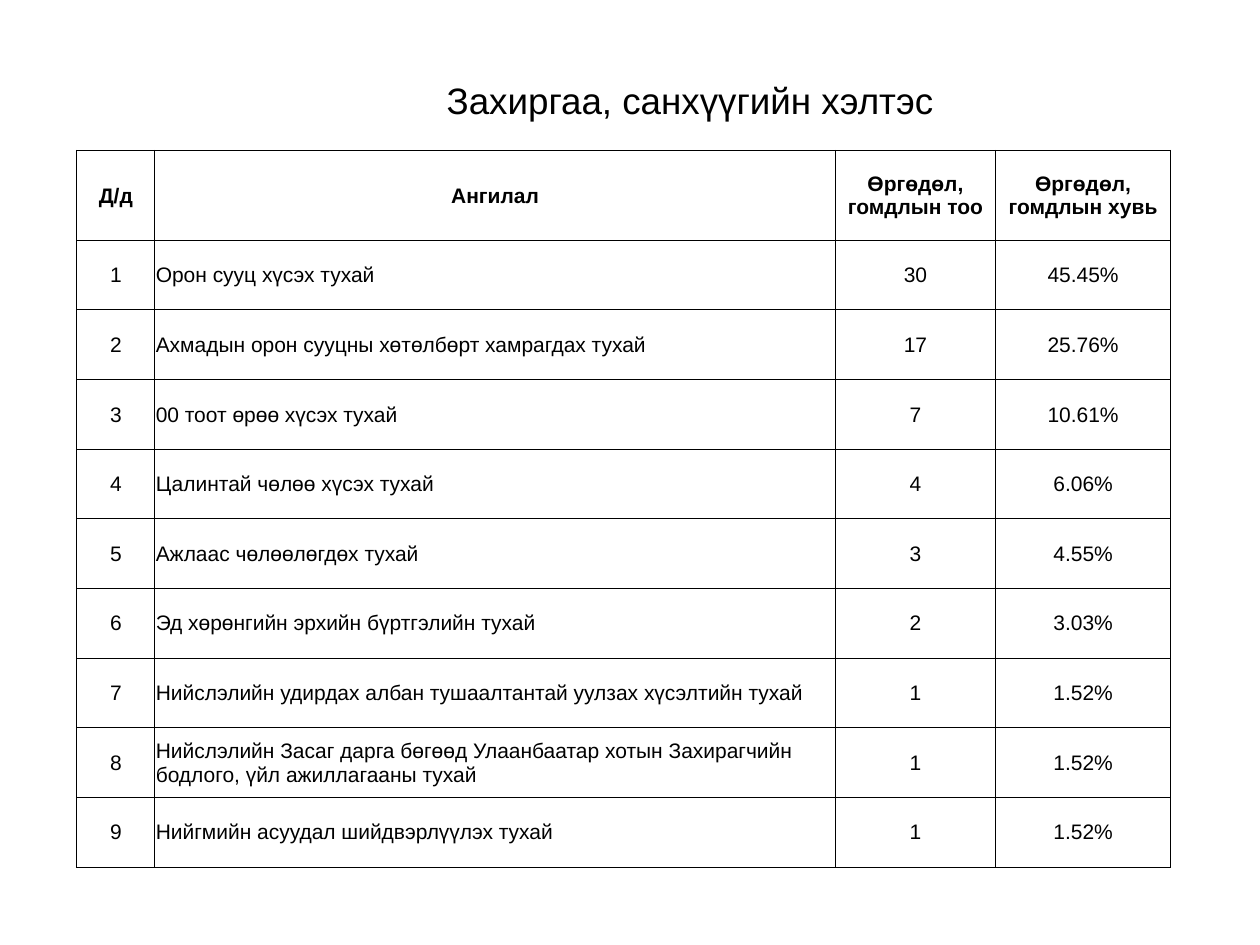
from lxml import etree
from pptx import Presentation
from pptx import util as u
from pptx.dml.color import RGBColor
from pptx.enum import text
from pptx.oxml.ns import qn

TITLE = "Захиргаа, санхүүгийн хэлтэс"
HEAD = ("Д/д", "Ангилал", "Өргөдөл, гомдлын тоо", "Өргөдөл, гомдлын хувь")
ITEMS = [
    ("Орон сууц хүсэх тухай", 30),
    ("Ахмадын орон сууцны хөтөлбөрт хамрагдах тухай", 17),
    ("00 тоот өрөө хүсэх тухай", 7),
    ("Цалинтай чөлөө хүсэх тухай", 4),
    ("Ажлаас чөлөөлөгдөх тухай", 3),
    ("Эд хөрөнгийн эрхийн бүртгэлийн тухай", 2),
    ("Нийслэлийн удирдах албан тушаалтантай уулзах хүсэлтийн тухай", 1),
    ("Нийслэлийн Засаг дарга бөгөөд Улаанбаатар хотын Захирагчийн "
     "бодлого, үйл ажиллагааны тухай", 1),
    ("Нийгмийн асуудал шийдвэрлүүлэх тухай", 1),
]

THEME = {"font": "Arial", "ink": "000000", "paper": "FFFFFF",
         "title": 21, "body": 12, "rule": 0.5}
LEFT, TOP, HIGH = 1.55, 3.03, 14.45
COLS = (1.57, 13.72, 3.23, 3.53)
HEAD_H = 1.81
ROW_H = (HIGH - HEAD_H) / len(ITEMS)
INSET = 0.02


def write(frame, words, size, bold=False, align=text.PP_ALIGN.CENTER):
    par = frame.paragraphs[0]
    par.alignment = align
    run = par.add_run()
    run.text = words
    run.font.name = THEME["font"]
    run.font.size = u.Pt(size)
    run.font.bold = bold
    run.font.color.rgb = RGBColor.from_string(THEME["ink"])


def frame_cell(cell):
    """Rule all four sides; borders must come before the fill in the XML."""
    props = cell._tc.get_or_add_tcPr()
    for i, side in enumerate(("lnL", "lnR", "lnT", "lnB")):
        line = etree.Element(qn("a:" + side), w=str(u.Pt(THEME["rule"])))
        fill = etree.SubElement(line, qn("a:solidFill"))
        etree.SubElement(fill, qn("a:srgbClr"), val=THEME["ink"])
        props.insert(i, line)


def add_title(slide):
    box = slide.shapes.add_textbox(u.Cm(3.71), u.Cm(1.45), u.Cm(20.4), u.Cm(1.14))
    box.text_frame.word_wrap = True
    box.text_frame.auto_size = text.MSO_AUTO_SIZE.SHAPE_TO_FIT_TEXT
    write(box.text_frame, TITLE, THEME["title"])


def add_grid(slide):
    total = sum(count for _, count in ITEMS)
    rows = [HEAD] + [(str(n), name, str(count), f"{count / total:.2%}")
                     for n, (name, count) in enumerate(ITEMS, 1)]
    grid = slide.shapes.add_table(len(rows), len(COLS), u.Cm(LEFT), u.Cm(TOP),
                                  u.Cm(sum(COLS)), u.Cm(HIGH)).table
    grid.first_row = grid.horz_banding = False
    for col, wide in zip(grid.columns, COLS):
        col.width = u.Cm(wide)
    for r, row in enumerate(rows):
        grid.rows[r].height = u.Cm(ROW_H if r else HEAD_H)
        for c, words in enumerate(row):
            cell = grid.cell(r, c)
            cell.margin_left = cell.margin_right = cell.margin_top = u.Cm(INSET)
            cell.margin_bottom = 0
            cell.vertical_anchor = text.MSO_ANCHOR.MIDDLE
            cell.fill.solid()
            cell.fill.fore_color.rgb = RGBColor.from_string(THEME["paper"])
            frame_cell(cell)
            side = text.PP_ALIGN.LEFT if r and c == 1 else text.PP_ALIGN.CENTER
            write(cell.text_frame, words, THEME["body"], r == 0, side)


def main():
    deck = Presentation()
    deck.slide_width, deck.slide_height = u.Cm(25.4), u.Cm(19.05)
    slide = deck.slides.add_slide(deck.slide_layouts[6])
    add_title(slide)
    add_grid(slide)
    deck.save("out.pptx")


if __name__ == "__main__":
    main()
